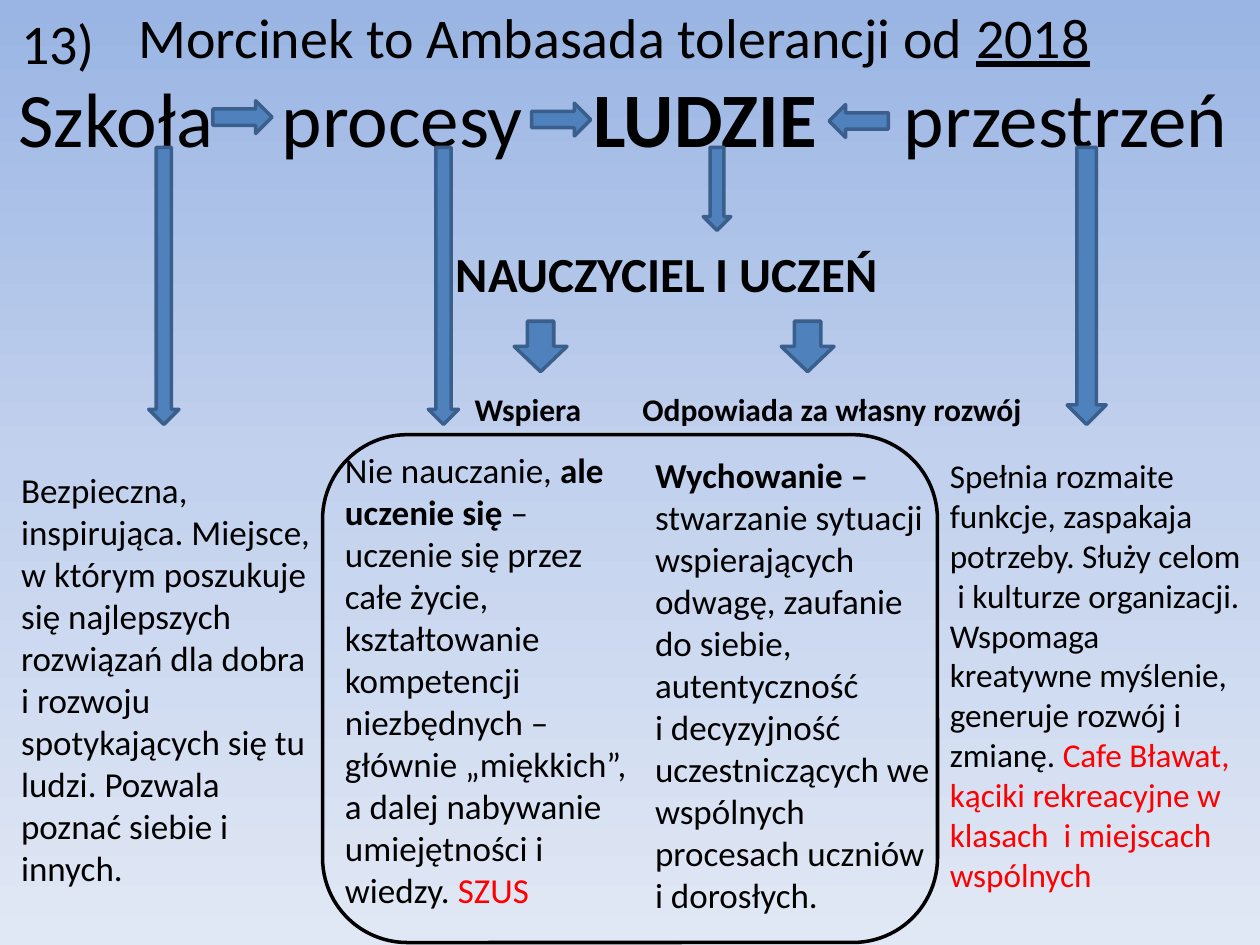
from copy import deepcopy
from dataclasses import dataclass

from lxml import etree
from pptx import Presentation
from pptx.dml.color import RGBColor
from pptx.enum.shapes import MSO_SHAPE
from pptx.enum.text import MSO_ANCHOR, MSO_AUTO_SIZE, PP_ALIGN
from pptx.oxml.ns import qn
from pptx.util import Pt

DOWN = MSO_SHAPE.DOWN_ARROW
RIGHT = MSO_SHAPE.RIGHT_ARROW
ROUND = MSO_SHAPE.ROUNDED_RECTANGLE
LEFT, CENTER = PP_ALIGN.LEFT, PP_ALIGN.CENTER
MIDDLE, TOP = MSO_ANCHOR.MIDDLE, MSO_ANCHOR.TOP
FIXED = MSO_AUTO_SIZE.NONE


@dataclass(frozen=True)
class Theme:
    """Hold the colours, font and type sizes of the slide."""
    font: str = "Calibri"
    ink: str = "000000"
    red: str = "FF0000"
    blue: str = "4F81BD"
    edge: str = "3A5F8C"
    sky: tuple = ("9AB5E4", "C2D1ED", "E1E8F5")
    line: float = 2
    title: int = 44
    head: int = 32
    sub: int = 28
    body: int = 20
    side: int = 19
    label: int = 18


THEME = Theme()
BOLD = {"bold": True}
RED = {"color": THEME.red}
LINE = {"underline": True}


def paint_back(slide):
    """Fill the background with a vertical gradient of even stops."""
    fill = slide.background.fill
    fill.gradient()
    fill.gradient_angle = 270
    stops = slide._element.find(".//" + qn("a:gsLst"))
    stops.append(deepcopy(stops[-1]))
    last = len(THEME.sky) - 1
    for i, (stop, tone) in enumerate(zip(fill.gradient_stops, THEME.sky)):
        stop.position = i / last
        stop.color.rgb = RGBColor.from_string(tone)


def write(para, runs, size):
    """Add runs of text, each with a dict of format values."""
    for text, look in runs:
        for i, part in enumerate(text.split("\n")):
            if i:
                para.add_line_break()
            run = para.add_run()
            run.text = part
            form = {"name": THEME.font, "size": Pt(size), "bold": False, **look}
            tone = form.pop("color", THEME.ink)
            for key, value in form.items():
                setattr(run.font, key, value)
            run.font.color.rgb = RGBColor.from_string(tone)


def place(shape, box):
    """Move and size a shape to a box in points."""
    for key, value in zip(("left", "top", "width", "height"), box):
        setattr(shape, key, Pt(value))


def set_tabs(para, stops):
    """Set left tab stops in points from the text edge."""
    props = para._p.get_or_add_pPr()
    tabs = etree.SubElement(props, qn("a:tabLst"))
    for stop in stops:
        etree.SubElement(tabs, qn("a:tab"), pos=str(Pt(stop)), algn="l")


def add_title(slide, box, runs, stops):
    """Format the title as words set on tab stops."""
    title = slide.shapes.title
    place(title, box)
    frame = title.text_frame
    form = {"auto_size": FIXED, "vertical_anchor": MIDDLE,
            "word_wrap": True, "margin_left": Pt(10.5)}
    for key, value in form.items():
        setattr(frame, key, value)
    para = frame.paragraphs[0]
    para.alignment = LEFT
    set_tabs(para, stops)
    write(para, runs, THEME.title)


def add_text(slide, box, runs, size, align=LEFT):
    """Add a wrapped text box."""
    frame = slide.shapes.add_textbox(*map(Pt, box)).text_frame
    form = {"word_wrap": True, "auto_size": FIXED, "vertical_anchor": TOP}
    for key, value in form.items():
        setattr(frame, key, value)
    frame.paragraphs[0].alignment = align
    write(frame.paragraphs[0], runs, size)


def add_form(slide, kind, box, edge, fill=None, turn=0):
    """Add an outlined shape with an optional fill."""
    shape = slide.shapes.add_shape(kind, *map(Pt, box))
    shape.shadow.inherit = False
    shape.rotation = turn
    if fill:
        shape.fill.solid()
        shape.fill.fore_color.rgb = RGBColor.from_string(fill)
    else:
        shape.fill.background()
    shape.line.color.rgb = RGBColor.from_string(edge)
    shape.line.width = Pt(THEME.line)


def add_arrow(slide, kind, box, turn=0):
    """Add a blue block arrow."""
    add_form(slide, kind, box, THEME.edge, THEME.blue, turn)


def main():
    """Build the slide and save it."""
    deck = Presentation()
    deck.slide_width, deck.slide_height = Pt(720), Pt(540)
    slide = deck.slides.add_slide(deck.slide_layouts[5])
    paint_back(slide)
    add_form(slide, ROUND, (184.3, 248.4, 351.4, 290.2), THEME.ink)
    words = [("Szkoła\tprocesy\t", {}), ("LUDZIE", BOLD), ("\tprzestrzeń", {})]
    add_title(slide, (0, 21.6, 711.4, 90), words, (150.5, 328.5, 506))

    school = [("Bezpieczna, inspirująca. Miejsce, w którym poszukuje się "
               "najlepszych rozwiązań dla dobra i rozwoju spotykających się tu "
               "ludzi. Pozwala poznać siebie i innych.", {})]
    learn = [("Nie nauczanie, ", {}), ("ale uczenie się ", BOLD),
             ("– uczenie się przez całe życie, kształtowanie kompetencji "
              "niezbędnych – głównie „miękkich”, a dalej nabywanie "
              "umiejętności i wiedzy. ", {}), ("SZUS", RED)]
    raise_up = [("Wychowanie –", BOLD),
                (" stwarzanie sytuacji wspierających odwagę, zaufanie do siebie, "
                 "autentyczność\ni decyzyjność uczestniczących we wspólnych "
                 "procesach uczniów\ni dorosłych.", {})]
    space = [("Spełnia rozmaite funkcje, zaspakaja potrzeby. Służy celom\n"
              " i kulturze organizacji. Wspomaga kreatywne myślenie, generuje "
              "rozwój i zmianę. ", {}),
             ("Cafe Bławat, kąciki rekreacyjne w klasach  i miejscach "
              "wspólnych", RED)]
    for box, runs, size in (
        ((5, 264.2, 182.9, 249.8), school, THEME.body),
        ((190, 252.7, 181.4, 295.9), learn, THEME.body),
        ((367.2, 255.6, 181.4, 295.9), raise_up, THEME.body),
        ((535.7, 256.6, 184.3, 260.6), space, THEME.side),
        ((253.4, 135.4, 294.5, 41), [("NAUCZYCIEL I UCZEŃ", BOLD)], THEME.sub),
        ((264.2, 219.2, 79.2, 28.8), [("Wspiera", BOLD)], THEME.label),
        ((360, 219.2, 232.6, 28.8), [("Odpowiada za własny rozwój", BOLD)],
         THEME.label),
        ((5, 1.4, 56.9, 46), [("13)", {})], THEME.head),
    ):
        add_text(slide, box, runs, size)
    add_text(slide, (5, -2.2, 691.9, 46),
             [("Morcinek to Ambasada tolerancji od ", {}), ("2018", LINE)],
             THEME.head, CENTER)

    for left, wide, high in ((85, 17.3, 158.4), (244.8, 17.3, 158.4),
                             (401.8, 15.8, 47.5), (609.8, 22.3, 158.4)):
        add_arrow(slide, DOWN, (left, 84.2, wide, high))
    for left in (293.8, 446.4):
        add_arrow(slide, DOWN, (left, 183.6, 30.2, 28.8))
    for left, top, turn in ((121.7, 57.6, 0), (303.8, 59, 0), (473.8, 59.8, 180)):
        add_arrow(slide, RIGHT, (left, top, 33.8, 18.7), turn)
    deck.save("out.pptx")


if __name__ == "__main__":
    main()
